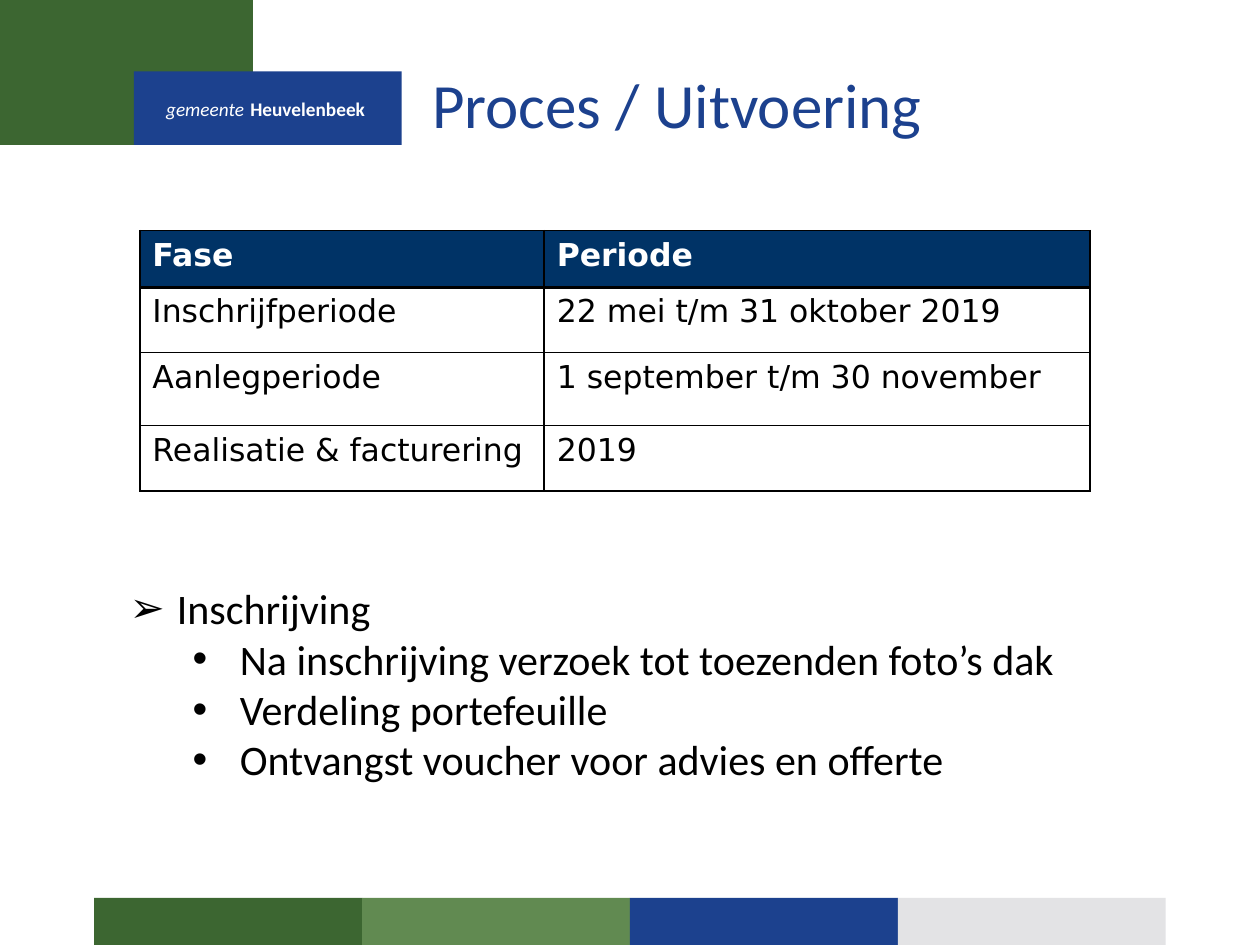
from lxml.etree import SubElement
from pptx import Presentation
from pptx.dml.color import RGBColor
from pptx.enum.shapes import MSO_SHAPE as Shape
from pptx.enum.text import MSO_ANCHOR as Anchor, MSO_AUTO_SIZE as AutoSize, PP_ALIGN as Align
from pptx.oxml.ns import qn
from pptx.util import Cm, Pt

GREEN, LIGHT_GREEN, BLUE, GREY = "3C6631", "618A51", "1C418E", "E3E3E5"
NAVY, BLACK, WHITE = "003366", "000000", "FFFFFF"


def colour(hex_code):
    return RGBColor.from_string(hex_code)


def add_text(paragraph, text, size=18, font="Calibri", color=BLACK, bold=False, italic=False):
    run = paragraph.add_run()
    run.text = text
    run.font.size = Pt(size)
    run.font.name = font
    run.font.bold = bold
    run.font.italic = italic
    run.font.color.rgb = colour(color)


def set_bullet(paragraph, character, indent, hanging):
    properties = paragraph._p.get_or_add_pPr()
    properties.set("marL", str(Cm(indent)))
    properties.set("indent", str(-Cm(hanging)))
    SubElement(properties, qn("a:buFont"), typeface="Arial")
    SubElement(properties, qn("a:buChar"), char=character)


def set_borders(cell, bottom=1):
    properties = cell._tc.get_or_add_tcPr()
    for side, width in (("L", 1), ("R", 1), ("T", 1), ("B", bottom)):
        line = SubElement(properties, qn(f"a:ln{side}"), w=str(Pt(width)))
        fill = SubElement(line, qn("a:solidFill"))
        SubElement(fill, qn("a:srgbClr"), val=BLACK)


def place(shape, left, top, width, height):
    shape.left, shape.top = Cm(left), Cm(top)
    shape.width, shape.height = Cm(width), Cm(height)


class SlideBuilder:
    """Holds the slide and the fonts used on it."""

    text_font = "Calibri"
    table_font = "DejaVu Sans"

    def __init__(self, slide):
        self.slide = slide

    def block(self, color, left, top, width, height):
        shape = self.slide.shapes.add_shape(
            Shape.RECTANGLE, Cm(left), Cm(top), Cm(width), Cm(height))
        shape.shadow.inherit = False
        shape.fill.solid()
        shape.fill.fore_color.rgb = colour(color)
        shape.line.fill.background()

    def sender(self, prefix, name, left, top, width, height):
        box = self.slide.shapes.add_textbox(Cm(left), Cm(top), Cm(width), Cm(height))
        box.text_frame.word_wrap = True
        paragraph = box.text_frame.paragraphs[0]
        add_text(paragraph, prefix, size=11, font=self.text_font, color=WHITE, italic=True)
        add_text(paragraph, " ", size=10, font=self.table_font, color=WHITE, bold=True)
        add_text(paragraph, name, size=11, font=self.text_font, color=WHITE, bold=True)

    def title(self, text, *position):
        title = self.slide.shapes.title
        place(title, *position)
        frame = title.text_frame
        frame.vertical_anchor = Anchor.MIDDLE
        frame.auto_size = AutoSize.NONE
        paragraph = frame.paragraphs[0]
        paragraph.alignment = Align.LEFT
        add_text(paragraph, text, size=36, font=self.text_font, color=BLUE)

    def bullets(self, items, *position):
        body = self.slide.placeholders[1]
        place(body, *position)
        frame = body.text_frame
        frame.auto_size = AutoSize.NONE
        styles = (("➢", 0.95, 0.95), ("•", 2.22, 0.95))
        for index, (level, text) in enumerate(items):
            paragraph = frame.add_paragraph() if index else frame.paragraphs[0]
            paragraph.level = level
            paragraph.space_before = Pt(0)
            set_bullet(paragraph, *styles[level])
            add_text(paragraph, text, size=24, font=self.text_font)

    def table(self, rows, left, top, widths, heights):
        table = self.slide.shapes.add_table(
            len(rows), len(widths), Cm(left), Cm(top), Cm(sum(widths)), Cm(sum(heights))).table
        table.horz_banding = False
        for column, width in zip(table.columns, widths):
            column.width = Cm(width)
        for index, (row, height, texts) in enumerate(zip(table.rows, heights, rows)):
            row.height = Cm(height)
            header = index == 0
            for cell, text in zip(row.cells, texts):
                set_borders(cell, bottom=2 if header else 1)
                if header:
                    cell.fill.solid()
                    cell.fill.fore_color.rgb = colour(NAVY)
                else:
                    cell.fill.background()
                add_text(cell.text_frame.paragraphs[0], text, font=self.table_font,
                         color=WHITE if header else BLACK, bold=header)


def main():
    presentation = Presentation()
    presentation.slide_width, presentation.slide_height = Cm(25.4), Cm(19.05)
    builder = SlideBuilder(presentation.slides.add_slide(presentation.slide_layouts[1]))

    builder.block(GREEN, 0, 0, 5.1, 1.52)
    builder.block(GREEN, 0, 0, 2.7, 2.92)
    builder.block(BLUE, 2.7, 1.44, 5.4, 1.48)
    builder.sender("gemeente", "Heuvelenbeek", 3.1, 1.83, 5.59, 0.74)
    for index, color in enumerate((GREEN, LIGHT_GREEN, BLUE, GREY)):
        builder.block(color, 1.9 + index * 5.4, 18.1, 5.4, 0.95)

    builder.title("Proces / Uitvoering", 8.46, 1.2, 16.9, 1.75)
    builder.table(
        [("Fase", "Periode"),
         ("Inschrijfperiode", "22 mei t/m 31 oktober 2019"),
         ("Aanlegperiode", "1 september t/m 30 november"),
         ("Realisatie & facturering", "2019")],
        2.82, 4.65, widths=(8.15, 11), heights=(1.14, 1.32, 1.47, 1.32))
    builder.bullets(
        [(0, "Inschrijving"),
         (1, "Na inschrijving verzoek tot toezenden foto’s dak"),
         (1, "Verdeling portefeuille"),
         (1, "Ontvangst voucher voor advies en offerte")],
        2.36, 11.62, 20.04, 4.36)

    presentation.save("out.pptx")


if __name__ == "__main__":
    main()
